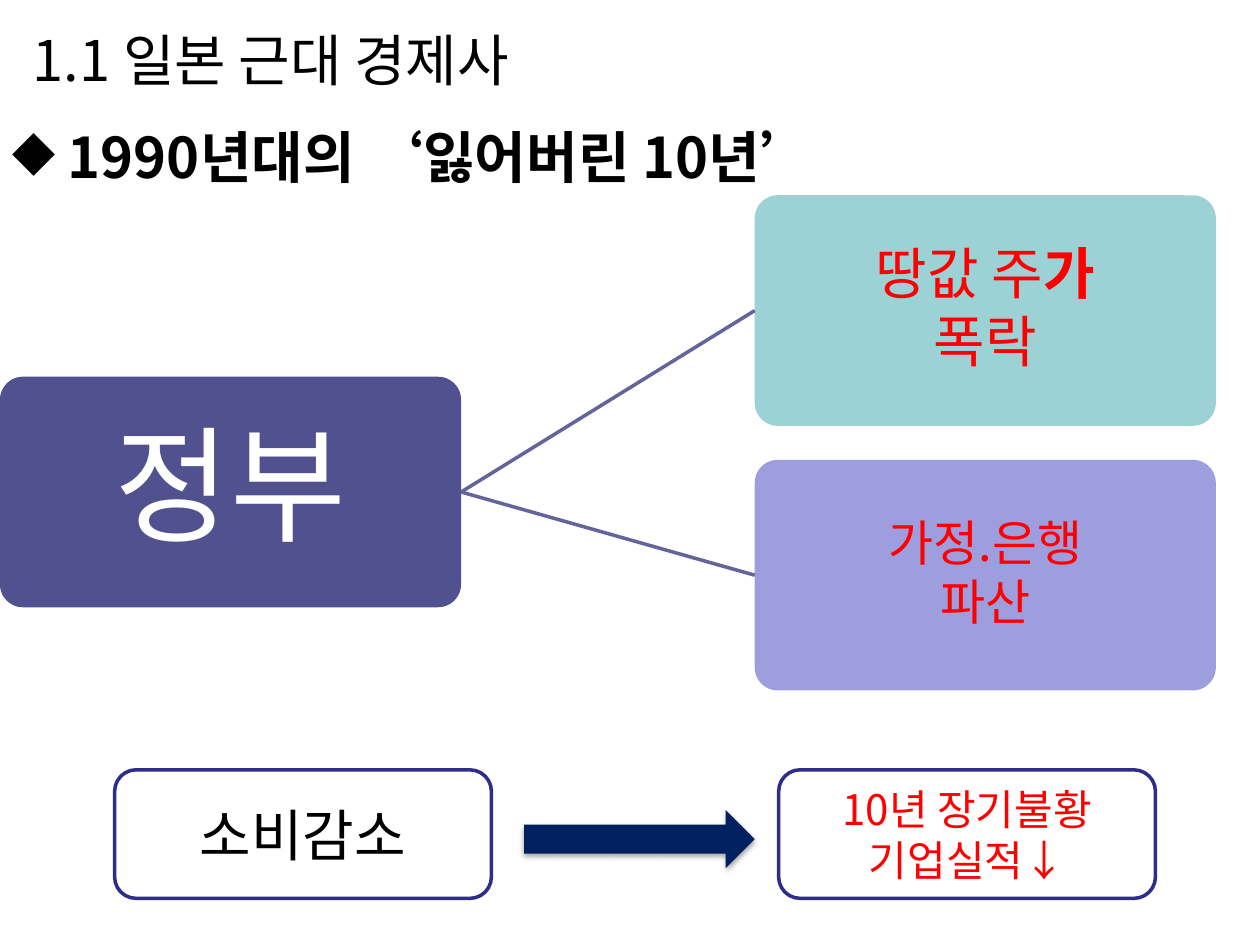
from lxml import etree
from pptx import Presentation
from pptx.dml.color import RGBColor
from pptx.enum.shapes import MSO_CONNECTOR as CONNECTOR, MSO_SHAPE as SHAPE
from pptx.enum.text import MSO_ANCHOR as ANCHOR, PP_ALIGN as ALIGN
from pptx.oxml.ns import qn
from pptx.util import Inches, Pt

FONT = "Noto Sans CJK KR"
LEFT, RIGHT = 1, 3


def rgb(value):
    return RGBColor.from_string(value)


def style_run(r, size, color, bold=False):
    r.font.name = FONT
    etree.SubElement(r.font._element, qn("a:ea"), typeface=FONT)
    r.font.size = Pt(size)
    r.font.bold = bold
    r.font.color.rgb = rgb(color)


def set_text(tf, lines, size, color, bold=False, align=ALIGN.CENTER):
    """Fill the frame; each line is a string or a list of (text, bold) runs."""
    tf.word_wrap = True
    tf.vertical_anchor = ANCHOR.MIDDLE
    for i, line in enumerate(lines):
        p = tf.paragraphs[0] if i == 0 else tf.add_paragraph()
        p.alignment = align
        for text, heavy in [(line, bold)] if isinstance(line, str) else line:
            r = p.add_run()
            r.text = text
            style_run(r, size, color, heavy)


def set_insets(tf, inset):
    tf.margin_left = tf.margin_right = Inches(inset)
    tf.margin_top = tf.margin_bottom = Inches(inset)


def add_block(slide, kind, x, y, w, h, fill, line=None):
    sp = slide.shapes.add_shape(kind, Inches(x), Inches(y), Inches(w), Inches(h))
    sp.shadow.inherit = False
    sp.fill.solid()
    sp.fill.fore_color.rgb = rgb(fill)
    if line:
        sp.line.color.rgb = rgb(line)
        sp.line.width = Pt(2)
    else:
        sp.line.fill.background()
    return sp


def add_heading(slide, x, y, w):
    title = slide.shapes.title
    title.left, title.top = Inches(x), Inches(y)
    title.width, title.height = Inches(w), Inches(0.84)
    title.text_frame.margin_left = Inches(0.26)
    set_text(title.text_frame, ["1.1 일본 근대 경제사"], 32, "000000", align=ALIGN.LEFT)

    sp = slide.shapes.add_textbox(Inches(x), Inches(y + 0.87), Inches(w), Inches(0.64))
    tf = sp.text_frame
    pPr = tf.paragraphs[0]._p.get_or_add_pPr()
    pPr.set("marL", str(Inches(0.44)))
    pPr.set("indent", str(-Inches(0.44)))
    etree.SubElement(pPr, qn("a:buChar"), char="◆")
    set_text(tf, ["1990년대의 ‘잃어버린 10년’"], 32, "000000", True, ALIGN.LEFT)


def add_node(slide, x, y, fill, alpha, lines, size, color, inset):
    sp = add_block(slide, SHAPE.ROUNDED_RECTANGLE, x, y, 3.66, 1.83, fill)
    sp.adjustments[0] = 0.1
    clr = sp.fill._xPr.find(qn("a:solidFill"))[0]
    etree.SubElement(clr, qn("a:alpha"), val=str(alpha * 1000))
    set_insets(sp.text_frame, inset)
    set_text(sp.text_frame, lines, size, color)
    for p in sp.text_frame.paragraphs:
        p.line_spacing = 0.9
        p.space_after = Pt(size / 8)
    return sp


def add_branch(slide, parent, child):
    line = slide.shapes.add_connector(CONNECTOR.STRAIGHT, 0, 0, 0, 0)
    line.begin_connect(parent, RIGHT)
    line.end_connect(child, LEFT)
    line.line.color.rgb = rgb("64649B")
    line.line.width = Pt(2)
    etree.SubElement(line._element.spPr, qn("a:effectLst"))


def add_tree(slide, x, y):
    root = add_node(slide, x, y + 1.44, "262673", 80, ["정부"], 72, "FFFFFF", 0.05)
    branches = [
        ("72BFC5", [[("땅값 주", False), ("가", True)], "폭락"], 32),
        ("7575D1", ["가정.은행", "파산"], 28),
    ]
    for i, (fill, lines, size) in enumerate(branches):
        child = add_node(slide, x + 5.99, y + 2.1 * i, fill, 70, lines, size, "FF0000", 0.02)
        add_branch(slide, root, child)


def add_arrow(slide, x, y):
    sp = add_block(slide, SHAPE.RIGHT_ARROW, x, y, 1.83, 0.46, "002060")
    effects = sp._element.spPr.find(qn("a:effectLst"))
    shadow = etree.SubElement(effects, qn("a:outerShdw"), blurRad=str(Pt(3.1)),
                              dist=str(Pt(1.8)), dir="5400000", rotWithShape="0")
    clr = etree.SubElement(shadow, qn("a:srgbClr"), val="000000")
    etree.SubElement(clr, qn("a:alpha"), val="35000")


def add_outcome(slide, x, y):
    boxes = [
        (0, ["소비감소"], 32, "000000"),
        (5.27, ["10년 장기불황", "기업실적↓"], 24, "FF0000"),
    ]
    for dx, lines, size, color in boxes:
        sp = add_block(slide, SHAPE.ROUNDED_RECTANGLE, x + dx, y, 2.99, 1.02, "FFFFFF", "2D2D8A")
        set_text(sp.text_frame, lines, size, color)
    add_arrow(slide, x + 3.25, y + 0.32)


def main():
    prs = Presentation()
    prs.slide_width, prs.slide_height = Inches(10), Inches(7.5)
    slide = prs.slides.add_slide(prs.slide_layouts[5])
    add_heading(slide, 0, 0.05, 10)
    add_tree(slide, 0, 1.55)
    add_outcome(slide, 0.91, 6.11)
    prs.save("out.pptx")


if __name__ == "__main__":
    main()
